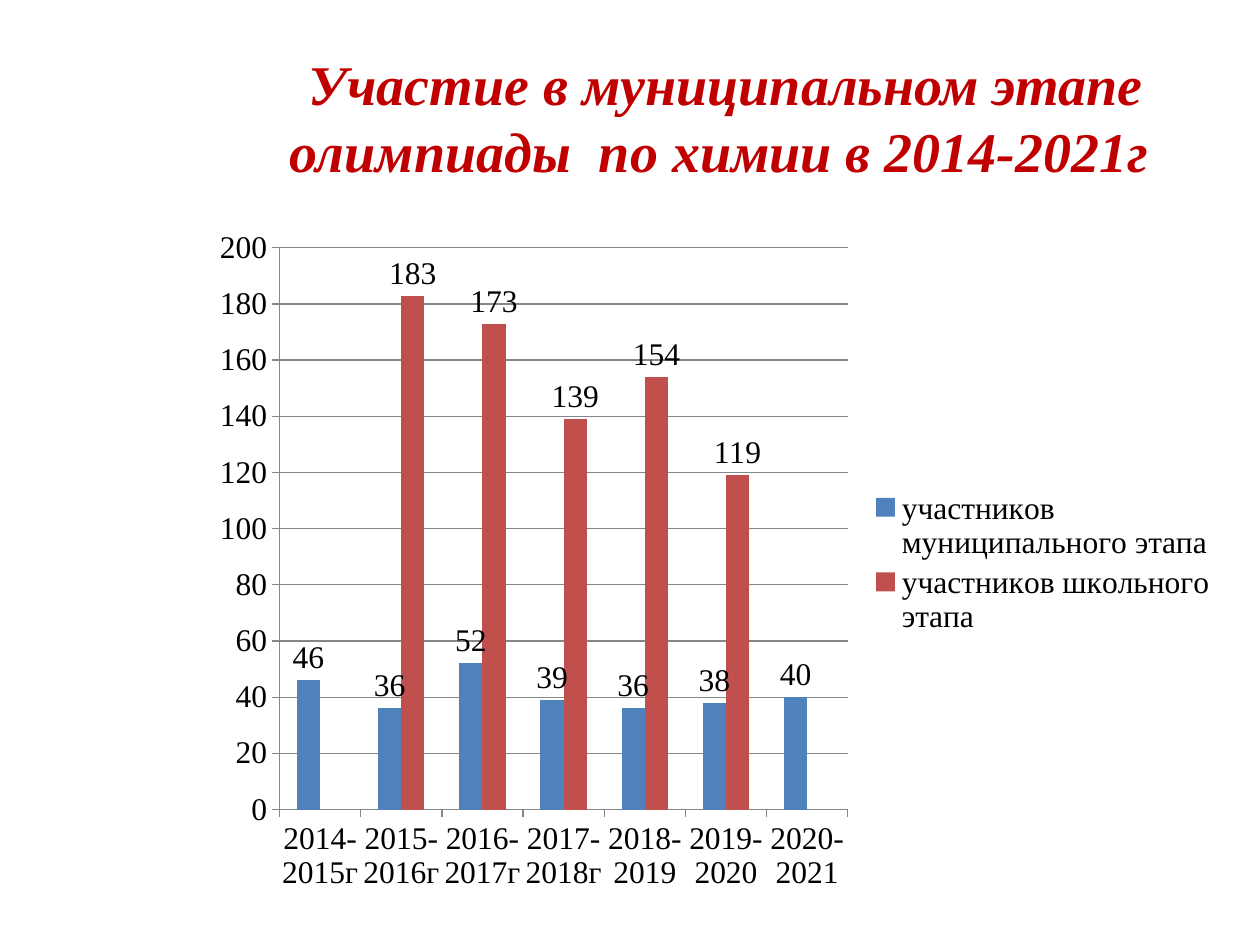
from lxml import etree
from pptx import Presentation
from pptx.chart.data import CategoryChartData
from pptx.dml.color import RGBColor
from pptx.enum.chart import XL_CHART_TYPE, XL_LABEL_POSITION, XL_LEGEND_POSITION, XL_TICK_MARK
from pptx.enum.text import MSO_ANCHOR, PP_ALIGN
from pptx.oxml.ns import qn
from pptx.util import Pt

COLUMNS = XL_CHART_TYPE.COLUMN_CLUSTERED
OUTSIDE_END = XL_LABEL_POSITION.OUTSIDE_END
RIGHT = XL_LEGEND_POSITION.RIGHT
TICK_OUT = XL_TICK_MARK.OUTSIDE
MIDDLE = MSO_ANCHOR.MIDDLE
CENTER = PP_ALIGN.CENTER

FONT = "Times New Roman"
TITLE = "Участие в муниципальном этапе олимпиады  по химии в 2014-2021г "
YEARS = ["2014-2015г", "2015-2016г", "2016-2017г", "2017-2018г",
         "2018-2019", "2019-2020", "2020-2021"]
SERIES = [
    ("участников муниципального этапа", "4F81BD", [46, 36, 52, 39, 36, 38, 40]),
    ("участников школьного этапа", "C0504D", [None, 183, 173, 139, 154, 119, None]),
]


def rgb(value):
    return RGBColor.from_string(value)


class Deck:
    ink = "000000"
    accent = "C00000"
    rule = "868686"

    def __init__(self, width, height):
        self.prs = Presentation()
        self.prs.slide_width, self.prs.slide_height = Pt(width), Pt(height)
        self.s = None

    def add_slide(self):
        self.s = self.prs.slides.add_slide(self.prs.slide_layouts[5])

    def style_font(self, font, size, color):
        font.name = FONT
        font.size = Pt(size)
        font.color.rgb = rgb(color)

    def title(self, text, x, y, w, h):
        sp = self.s.shapes.title
        sp.left, sp.top, sp.width, sp.height = Pt(x), Pt(y), Pt(w), Pt(h)
        tf = sp.text_frame
        tf.word_wrap = True
        tf.vertical_anchor = MIDDLE
        p = tf.paragraphs[0]
        p.text = text
        p.alignment = CENTER
        self.style_font(p.font, 32, self.accent)
        p.font.bold = p.font.italic = True

    def column_chart(self, categories, series, x, y, w, h, plot_area):
        data = CategoryChartData()
        data.categories = categories
        for name, _, values in series:
            data.add_series(name, values)
        chart = self.s.shapes.add_chart(COLUMNS, Pt(x), Pt(y), Pt(w), Pt(h), data).chart
        chart.has_title = False
        self.style_font(chart.font, 18, self.ink)
        chart.has_legend = True
        chart.legend.position = RIGHT
        chart.legend.include_in_layout = False

        plot = chart.plots[0]
        plot.gap_width = 150
        plot.overlap = 0
        plot.vary_by_categories = False
        for ser, (_, color, _) in zip(plot.series, series):
            ser.format.fill.solid()
            ser.format.fill.fore_color.rgb = rgb(color)
            ser.invert_if_negative = False
            labels = ser.data_labels
            labels.show_value = True
            labels.position = OUTSIDE_END

        axis = chart.value_axis
        axis.minimum_scale, axis.maximum_scale, axis.major_unit = 0, 200, 20
        axis.has_major_gridlines = True
        for item in (axis, chart.category_axis):
            item.major_tick_mark = TICK_OUT
        for item in (axis, chart.category_axis, axis.major_gridlines):
            item.format.line.color.rgb = rgb(self.rule)
            item.format.line.width = Pt(0.75)
        self.place_plot(chart, plot_area)

    def place_plot(self, chart, plot_area):
        area = chart._chartSpace.find(".//" + qn("c:plotArea"))
        layout = area.find(qn("c:layout"))
        if layout is None:
            layout = etree.Element(qn("c:layout"))
            area.insert(0, layout)
        manual = etree.SubElement(layout, qn("c:manualLayout"))
        settings = [("layoutTarget", "inner"), ("xMode", "edge"), ("yMode", "edge")]
        for tag, value in settings + list(zip("xywh", plot_area)):
            etree.SubElement(manual, qn("c:" + tag)).set("val", str(value))


def main():
    deck = Deck(720, 540)
    deck.add_slide()
    deck.title(TITLE, 146, 21.5, 538, 90)
    deck.column_chart(YEARS, SERIES, 112.5, 126, 590.5, 391.5, (0.08, 0.04, 0.55, 0.82))
    deck.prs.save("out.pptx")


if __name__ == "__main__":
    main()
